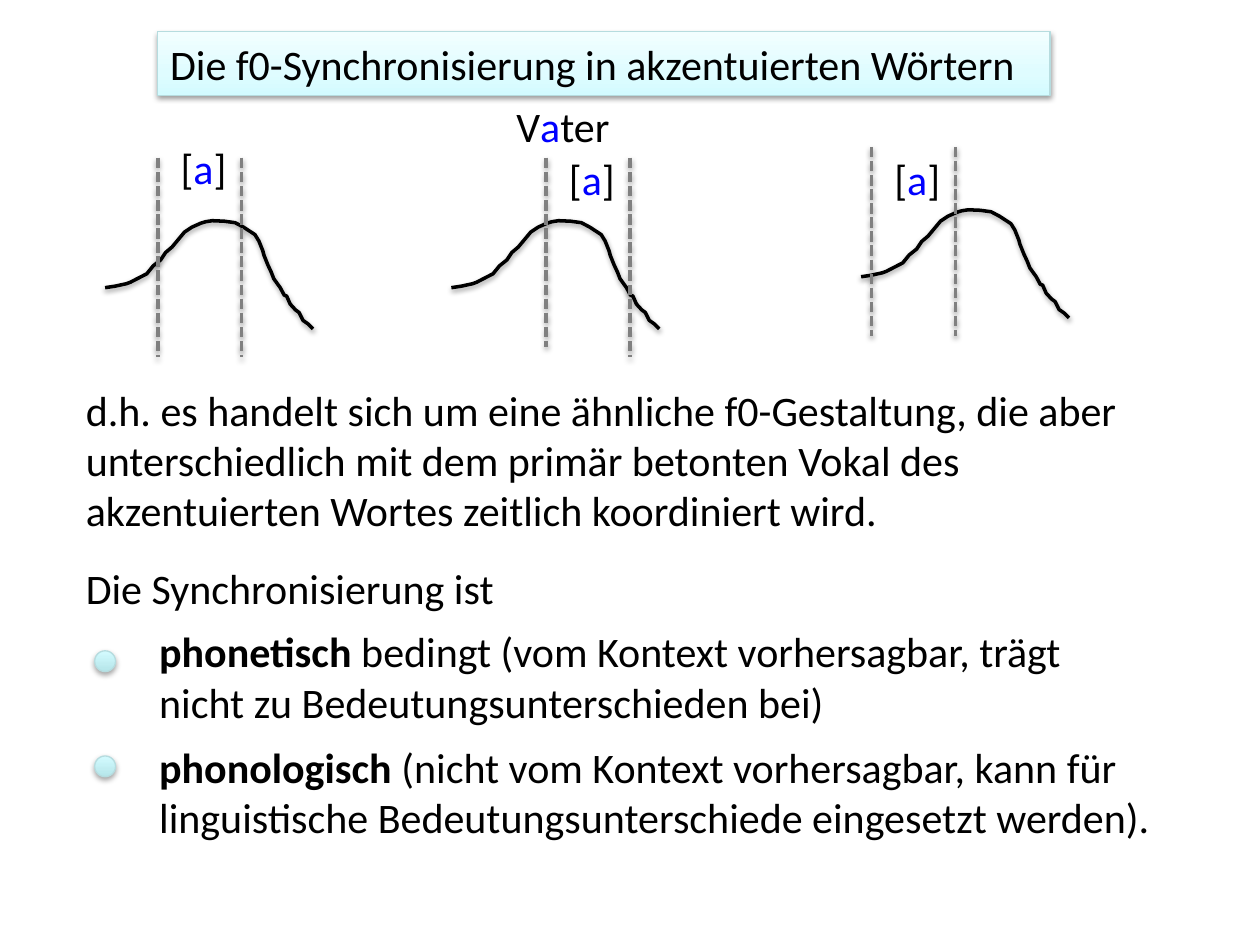
"""Build a slide on f0 synchronisation in accented words."""
import copy

import lxml.etree
import pptx
import pptx.dml.color
import pptx.enum.dml
import pptx.enum.shapes
import pptx.enum.text
import pptx.oxml.ns
import pptx.util

Cm = pptx.util.Cm
Pt = pptx.util.Pt
qn = pptx.oxml.ns.qn
COLORS = {
    "text": "000000", "vowel": "0000FF", "dash": "808080", "edge": "B6DCDF",
    "deep": "B5E5E9", "aqua": "D3FBFF", "pale": "DFFCFF", "white": "F2FEFF",
}
CURVE = [
    (0, 135), (20, 132), (43, 127), (51, 124), (84, 107), (97, 91),
    (112, 79), (122, 64), (135, 53), (145, 41), (160, 23), (175, 13),
    (193, 5), (203, 2), (216, 0), (240, 1), (262, 4), (279, 13), (302, 28),
    (310, 41), (318, 61), (320, 69), (328, 89), (335, 104), (340, 117),
    (353, 135), (361, 150), (366, 152), (373, 168), (384, 180),
    (391, 185), (399, 201), (409, 208), (419, 218),
]
LABEL = [("[", "text", False), ("a", "vowel", False), ("]", "text", False)]


def color(name):
    return pptx.dml.color.RGBColor.from_string(COLORS[name])


def shade(shape, alpha=38):
    spot = shape._element.spPr
    for old in spot.findall(qn("a:effectLst")):
        spot.remove(old)
    list_ = lxml.etree.SubElement(spot, qn("a:effectLst"))
    outer = lxml.etree.SubElement(
        list_, qn("a:outerShdw"), blurRad=str(Pt(3.1)), dist=str(Pt(1.6)),
        dir="5400000", rotWithShape="0")
    tone = lxml.etree.SubElement(outer, qn("a:srgbClr"), val=COLORS["text"])
    lxml.etree.SubElement(tone, qn("a:alpha"), val=str(alpha * 1000))


def stroke(shape, name, width):
    shape.line.color.rgb = color(name)
    shape.line.width = Pt(width)


def blend(shape, stops):
    shape.fill.gradient()
    shape.fill.gradient_angle = 90
    group = shape._element.spPr.find(".//" + qn("a:gsLst"))
    while len(group) < len(stops):
        group.append(copy.deepcopy(group[0]))
    for stop, (place, name) in zip(shape.fill.gradient_stops, stops):
        stop.position = place
        stop.color.rgb = color(name)


def write(shape, parts, wrap=True):
    frame = shape.text_frame
    frame.word_wrap = wrap
    frame.auto_size = pptx.enum.text.MSO_AUTO_SIZE.SHAPE_TO_FIT_TEXT
    para = frame.paragraphs[0]
    para.alignment = pptx.enum.text.PP_ALIGN.LEFT
    for text, name, bold in parts:
        run = para.add_run()
        run.text = text
        run.font.name = "Calibri"
        run.font.size = Pt(24)
        run.font.bold = bold
        run.font.color.rgb = color(name)


def add_text(slide, box, parts, wrap=True):
    write(slide.shapes.add_textbox(*map(Cm, box)), parts, wrap)


def add_shape(slide, kind, box, stops, alpha=38):
    shape = slide.shapes.add_shape(kind, *map(Cm, box))
    blend(shape, stops)
    stroke(shape, "edge", 0.75)
    shade(shape, alpha)
    return shape


def add_curve(slide, left, top):
    maker = slide.shapes.build_freeform(*CURVE[0], scale=Cm(0.01))
    maker.add_line_segments(CURVE[1:], close=False)
    shape = maker.convert_to_shape(Cm(left), Cm(top))
    shape.fill.background()
    stroke(shape, "text", 2)
    shade(shape)


def add_dash(slide, x, top, end):
    line = slide.shapes.add_connector(
        pptx.enum.shapes.MSO_CONNECTOR.STRAIGHT, *map(Cm, (x, top, x, end)))
    stroke(line, "dash", 2)
    line.line.dash_style = pptx.enum.dml.MSO_LINE.SQUARE_DOT
    shade(line)


def add_graph(slide, left, top, vowel, ends, label):
    add_curve(slide, left, top)
    for x, end in zip((vowel, vowel + 1.69), ends):
        add_dash(slide, x, top - 1.27, end)
    add_text(slide, (vowel + 0.21, label, 1.45, 1.28), LABEL, False)


def main():
    deck = pptx.Presentation()
    deck.slide_width, deck.slide_height = Cm(25.4), Cm(19.05)
    slide = deck.slides.add_slide(deck.slide_layouts[6])
    kinds = pptx.enum.shapes.MSO_SHAPE
    title = add_shape(slide, kinds.RECTANGLE, (3.18, 0.64, 17.99, 1.28),
                      [(0, "aqua"), (0.35, "pale"), (1, "white")])
    write(title, [("Die f0-Synchronisierung in akzentuierten Wörtern",
                   "text", False)])
    for graph in [
        (2.12, 4.45, 3.18, (7.2, 7.2), 2.75),
        (9.1, 4.45, 11.01, (6.99, 7.2), 2.96),
        (17.36, 4.23, 17.57, (6.77, 6.77), 2.96),
    ]:
        add_graph(slide, *graph)
    add_text(slide, (10.16, 1.91, 2.75, 1.28), [
        ("V", "text", False), ("a", "vowel", False), ("ter", "text", False)])
    add_text(slide, (1.48, 7.62, 22.86, 3.33), [(
        "d.h. es handelt sich um eine ähnliche f0-Gestaltung, die aber "
        "unterschiedlich mit dem primär betonten Vokal des "
        "akzentuierten Wortes zeitlich koordiniert wird.", "text", False)])
    add_text(slide, (1.48, 11.22, 13.97, 1.28),
             [("Die Synchronisierung ist", "text", False)])
    for top, width, head, rest in [
        (12.49, 19.69, "phonetisch", " bedingt (vom Kontext vorhersagbar, "
         "trägt nicht zu Bedeutungsunterschieden bei)"),
        (14.82, 21.38, "phonologisch", " (nicht vom Kontext vorhersagbar, kann "
         "für linguistische Bedeutungsunterschiede eingesetzt werden)."),
    ]:
        add_text(slide, (2.96, top, width, 2.31),
                 [(head, "text", True), (rest, "text", False)])
    for top in (13.12, 15.24):
        add_shape(slide, kinds.OVAL, (1.91, top, 0.42, 0.42),
                  [(0, "deep"), (1, "aqua")], 35)
    deck.save("out.pptx")


if __name__ == "__main__":
    main()
